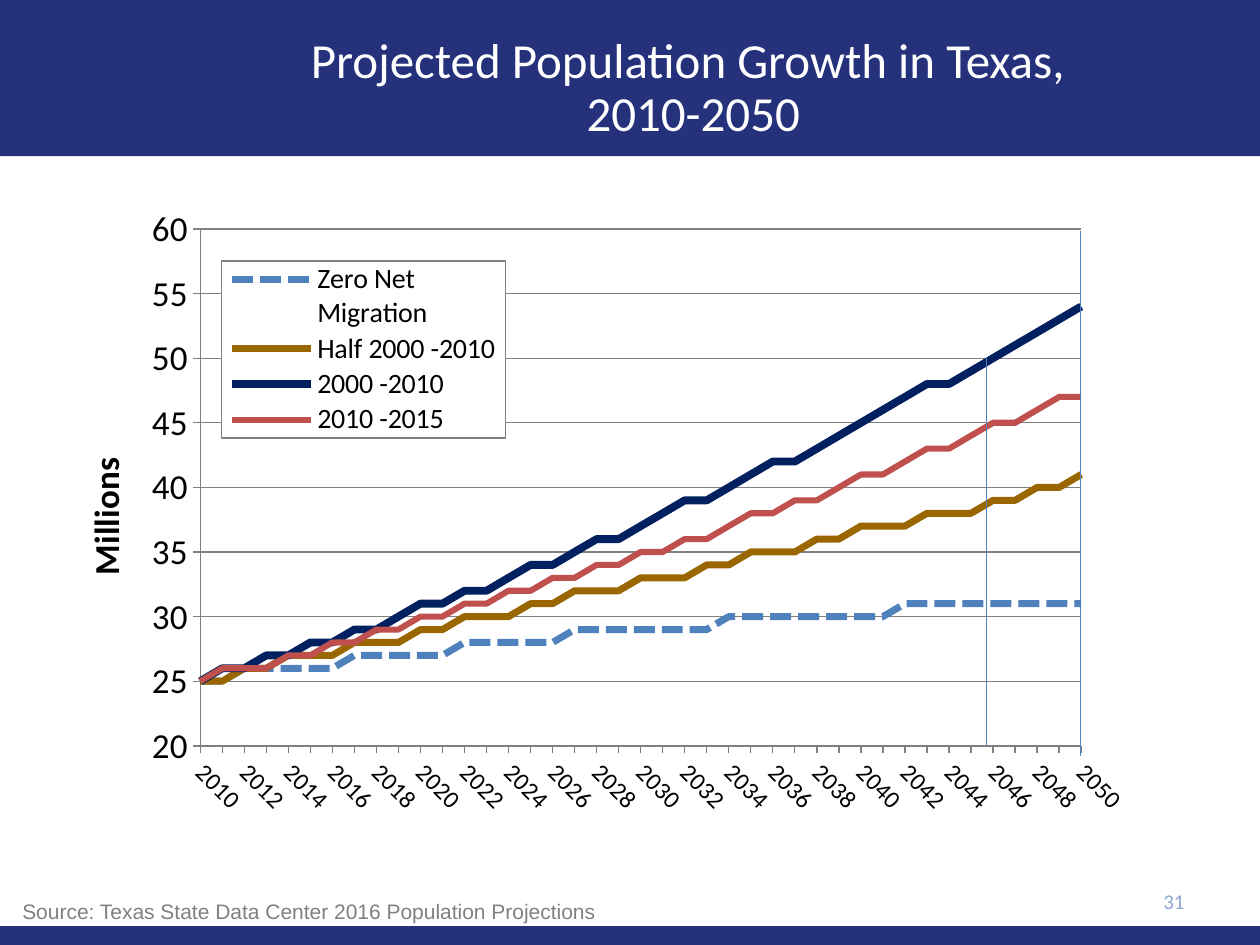
import pptx
import pptx.chart.data
import pptx.dml.color
import pptx.enum.chart
import pptx.enum.dml
import pptx.enum.shapes
import pptx.enum.text
import pptx.oxml
import pptx.oxml.ns
import pptx.util
from pptx.util import Cm

RGBColor = pptx.dml.color.RGBColor
NAVY_BAND = RGBColor(0x25, 0x32, 0x7B)
WHITE = RGBColor(0xFF, 0xFF, 0xFF)
BLACK = RGBColor(0, 0, 0)
GRAY = RGBColor(0x80, 0x80, 0x80)
PALE_BLUE = RGBColor(0x8F, 0xA5, 0xD1)
BLUE = RGBColor(0x4F, 0x81, 0xBD)
BROWN = RGBColor(0x99, 0x66, 0x00)
NAVY = RGBColor(0x00, 0x20, 0x60)
RED = RGBColor(0xC0, 0x50, 0x4D)

Dash = pptx.enum.dml.MSO_LINE
Align = pptx.enum.text.PP_ALIGN
Anchor = pptx.enum.text.MSO_ANCHOR

YEARS = range(2010, 2051)
# Name, millions per year, colour, line width in points, dash
SCENARIOS = [
    ("Zero Net Migration",
     [25, 25, 26, 26, 26, 26, 26, 27, 27, 27, 27, 27, 28, 28, 28, 28, 28, 29, 29, 29, 29,
      29, 29, 29, 30, 30, 30, 30, 30, 30, 30, 30, 31, 31, 31, 31, 31, 31, 31, 31, 31],
     BLUE, 4, Dash.SQUARE_DOT),
    ("Half 2000 -2010",
     [25, 25, 26, 26, 27, 27, 27, 28, 28, 28, 29, 29, 30, 30, 30, 31, 31, 32, 32, 32, 33,
      33, 33, 34, 34, 35, 35, 35, 36, 36, 37, 37, 37, 38, 38, 38, 39, 39, 40, 40, 41],
     BROWN, 4, None),
    ("2000 -2010",
     [25, 26, 26, 27, 27, 28, 28, 29, 29, 30, 31, 31, 32, 32, 33, 34, 34, 35, 36, 36, 37,
      38, 39, 39, 40, 41, 42, 42, 43, 44, 45, 46, 47, 48, 48, 49, 50, 51, 52, 53, 54],
     NAVY, 4.5, None),
    ("2010 -2015",
     [25, 26, 26, 26, 27, 27, 28, 28, 29, 29, 30, 30, 31, 31, 32, 32, 33, 33, 34, 34, 35,
      35, 36, 36, 37, 38, 38, 39, 39, 40, 41, 41, 42, 43, 43, 44, 45, 45, 46, 47, 47],
     RED, 3.5, None),
]


def set_values(target, values):
    for name, value in values.items():
        setattr(target, name, value)


def format_font(font, size, color, name="Calibri", bold=False):
    set_values(font, {"size": pptx.util.Pt(size), "name": name, "bold": bold})
    font.color.rgb = color


def parse_chart_xml(tag, content):
    namespaces = pptx.oxml.ns.nsdecls("c", "a")
    return pptx.oxml.parse_xml(f"<c:{tag} {namespaces}>{content}</c:{tag}>")


def manual_layout(x, y, width=None, height=None, inner=False):
    """Return a layout whose position and size are fractions of the chart."""
    values = {"layoutTarget": "inner" if inner else None, "xMode": "edge", "yMode": "edge",
              "x": x, "y": y, "w": width, "h": height}
    content = "".join(f'<c:{tag} val="{value}"/>'
                      for tag, value in values.items() if value is not None)
    return parse_chart_xml("layout", f"<c:manualLayout>{content}</c:manualLayout>")


def add_band(slide, top, height):
    band = slide.shapes.add_shape(
        pptx.enum.shapes.MSO_SHAPE.RECTANGLE, 0, top, Cm(25.4), height)
    band.shadow.inherit = False
    band.fill.solid()
    band.fill.fore_color.rgb = NAVY_BAND
    band.line.fill.background()


def format_title(slide):
    title = slide.shapes.title
    set_values(title, {"left": Cm(4.45), "top": Cm(0.43), "width": Cm(19.05), "height": Cm(2.74)})
    title.text_frame.text = "Projected Population Growth in Texas, \v2010-2050"
    set_values(title.text_frame, {"vertical_anchor": Anchor.MIDDLE, "word_wrap": True})
    paragraph = title.text_frame.paragraphs[0]
    set_values(paragraph, {"alignment": Align.CENTER, "line_spacing": 0.9})
    format_font(paragraph.font, 28, WHITE)
    slide.shapes._spTree.append(title._element)  # in front of the band


def add_text(slide, text, box, color, anchor, alignment, font_name):
    frame = slide.shapes.add_textbox(*box).text_frame
    set_values(frame, {"word_wrap": True, "vertical_anchor": anchor})
    paragraph = frame.paragraphs[0]
    paragraph.text = text
    paragraph.alignment = alignment
    format_font(paragraph.font, 12, color, font_name)


def add_marker_line(slide, x, bottom, top):
    line = slide.shapes.add_connector(
        pptx.enum.shapes.MSO_CONNECTOR.STRAIGHT, x, bottom, x, top)
    line.line.color.rgb = BLUE
    line.line.width = pptx.util.Pt(0.5)
    effects = f"<a:effectLst {pptx.oxml.ns.nsdecls('a')}/>"
    line._element.spPr.append(pptx.oxml.parse_xml(effects))


def format_axes(chart):
    category_axis, value_axis = chart.category_axis, chart.value_axis
    for axis, size in ((category_axis, 14), (value_axis, 20)):
        axis.major_tick_mark = pptx.enum.chart.XL_TICK_MARK.OUTSIDE
        axis.format.line.color.rgb = GRAY
        format_font(axis.tick_labels.font, size, BLACK)

    labels = category_axis._element.find(pptx.oxml.ns.qn("c:txPr"))
    labels.find(pptx.oxml.ns.qn("a:bodyPr")).set("rot", "2700000")
    last = category_axis._element.find(pptx.oxml.ns.qn("c:noMultiLvlLbl"))
    for tag, step in (("tickLblSkip", 2), ("tickMarkSkip", 1)):
        skip = parse_chart_xml(tag, "")
        skip.set("val", str(step))
        last.addprevious(skip)

    set_values(value_axis, {"minimum_scale": 20, "maximum_scale": 60, "major_unit": 5,
                            "has_major_gridlines": True})
    value_axis.major_gridlines.format.line.color.rgb = GRAY
    set_values(value_axis.tick_labels, {"number_format": "0", "number_format_is_linked": False})
    crossing = value_axis._element.find(pptx.oxml.ns.qn("c:crossBetween"))
    if crossing is None:
        crossing = parse_chart_xml("crossBetween", "")
        value_axis._element.find(pptx.oxml.ns.qn("c:crosses")).addnext(crossing)
    crossing.set("val", "midCat")

    frame = value_axis.axis_title.text_frame
    frame.text = "Millions"
    format_font(frame.paragraphs[0].runs[0].font, 20, BLACK, bold=True)
    frame._txBody.find(pptx.oxml.ns.qn("a:bodyPr")).set("rot", "-5400000")
    title = value_axis.axis_title._element
    for old_layout in title.findall(pptx.oxml.ns.qn("c:layout")):
        title.remove(old_layout)
    title.find(pptx.oxml.ns.qn("c:tx")).addnext(manual_layout(0.01, 0.4))


def format_legend(chart):
    chart.has_legend = True
    legend = chart.legend
    set_values(legend, {"position": pptx.enum.chart.XL_LEGEND_POSITION.LEFT,
                        "include_in_layout": True})
    format_font(legend.font, 16, BLACK)
    element = legend._element
    for old_layout in element.findall(pptx.oxml.ns.qn("c:layout")):
        element.remove(old_layout)
    element.find(pptx.oxml.ns.qn("c:legendPos")).addnext(manual_layout(0.14, 0.11, 0.25, 0.27))
    box_format = parse_chart_xml(
        "spPr", f'<a:solidFill><a:srgbClr val="{WHITE}"/></a:solidFill>'
        f'<a:ln w="9525"><a:solidFill><a:srgbClr val="{GRAY}"/></a:solidFill></a:ln>')
    element.find(pptx.oxml.ns.qn("c:overlay")).addnext(box_format)


def add_population_chart(slide):
    data = pptx.chart.data.CategoryChartData(number_format="0")
    data.categories = [str(year) for year in YEARS]
    for name, values, *_ in SCENARIOS:
        data.add_series(name, values)
    chart = slide.shapes.add_chart(
        pptx.enum.chart.XL_CHART_TYPE.LINE, Cm(1.27), Cm(3.81), Cm(22.86), Cm(13.21), data).chart
    chart.has_title = False
    format_font(chart.font, 20, BLACK)
    chart.plots[0].vary_by_categories = False
    for series, (_, _, color, width, dash) in zip(chart.plots[0].series, SCENARIOS):
        series.smooth = False
        series.marker.style = pptx.enum.chart.XL_MARKER_STYLE.NONE
        series.format.line.color.rgb = color
        set_values(series.format.line, {"width": pptx.util.Pt(width), "dash_style": dash})
    format_axes(chart)
    format_legend(chart)
    plot_area = chart._chartSpace.chart.plotArea
    for old_layout in plot_area.findall(pptx.oxml.ns.qn("c:layout")):
        plot_area.remove(old_layout)
    plot_area.insert(0, manual_layout(0.121, 0.061, 0.777, 0.789, inner=True))


def main():
    presentation = pptx.Presentation()
    set_values(presentation, {"slide_width": Cm(25.4), "slide_height": Cm(19.05)})
    slide = presentation.slides.add_slide(presentation.slide_layouts[5])
    add_band(slide, 0, Cm(3.15))
    add_band(slide, Cm(18.67), Cm(0.38))
    add_population_chart(slide)
    format_title(slide)
    add_text(slide, "31", (Cm(18.21), Cm(17.65), Cm(5.92), Cm(1.02)),
             PALE_BLUE, Anchor.MIDDLE, Align.RIGHT, "Calibri")
    add_text(slide, "Source: Texas State Data Center 2016 Population Projections",
             (Cm(0.2), Cm(17.98), Cm(24.33), Cm(0.76)), GRAY, Anchor.TOP, Align.LEFT, "Arial")
    add_marker_line(slide, Cm(19.89), Cm(15.04), Cm(7.19))
    add_marker_line(slide, Cm(21.79), Cm(15.24), Cm(4.65))
    presentation.save("out.pptx")


if __name__ == "__main__":
    main()
